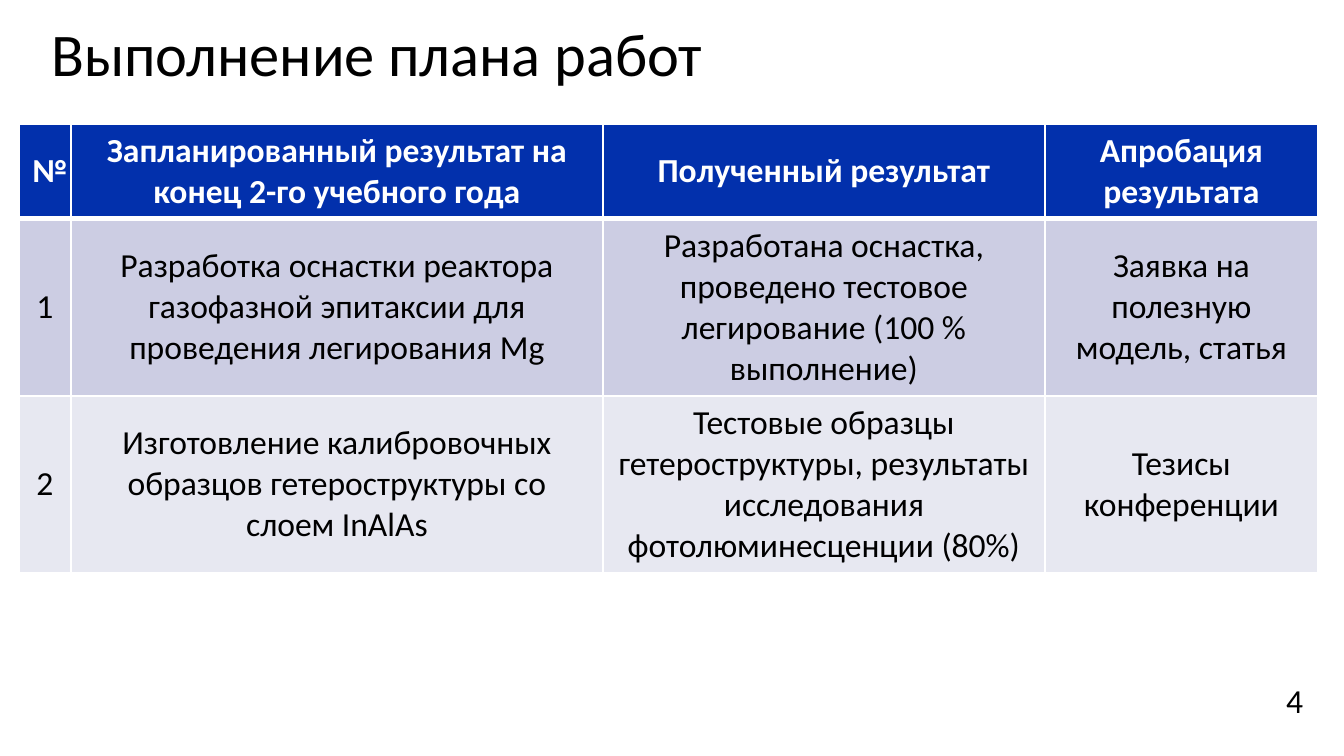
import pptx
import pptx.dml.color
import pptx.enum.text
import pptx.oxml
import pptx.oxml.ns
import pptx.util

PX = 914400 / 134.4  # EMU in one px
FONT = "Calibri"
BLACK, WHITE, BLUE = "000000", "FFFFFF", "0230AC"
BANDS = ["CCCDE3", "E7E8F1"]

ALIGN = pptx.enum.text.PP_ALIGN
ANCHOR = pptx.enum.text.MSO_ANCHOR


def px(length):
    return pptx.util.Emu(round(length * PX))


def color(value):
    return pptx.dml.color.RGBColor.from_string(value)


class PlanSlide:
    def __init__(self, deck):
        self.page = deck.slides.add_slide(deck.slide_layouts[6])

    def add_span(self, frame, text, size, ink=BLACK, bold=False, align=ALIGN.CENTER):
        para = frame.paragraphs[0]
        para.alignment = align
        span = para.add_run()
        span.text = text
        span.font.name = FONT
        span.font.size = pptx.util.Pt(size)
        span.font.bold = bold
        span.font.color.rgb = color(ink)

    def add_text(self, left, top, width, height, text, size,
                 align=ALIGN.LEFT, anchor=ANCHOR.TOP):
        box = self.page.shapes.add_textbox(px(left), px(top), px(width), px(height))
        box.text_frame.word_wrap = True
        box.text_frame.vertical_anchor = anchor
        self.add_span(box.text_frame, text, size, align=align)

    def add_border(self, cell, side, points):
        line = pptx.oxml.parse_xml(
            f'<a:{side} {pptx.oxml.ns.nsdecls("a")} w="{pptx.util.Pt(points)}">'
            f'<a:solidFill><a:srgbClr val="{WHITE}"/></a:solidFill></a:{side}>')
        cell._tc.get_or_add_tcPr().append(line)

    def add_table(self, left, top, widths, heights, rows):
        frame = self.page.shapes.add_table(
            len(rows), len(widths), px(left), px(top), px(sum(widths)), px(sum(heights)))
        table = frame.table
        for column, width in zip(table.columns, widths):
            column.width = px(width)
        for row, height in zip(table.rows, heights):
            row.height = px(height)
        for r, texts in enumerate(rows):
            header = r == 0
            for c, text in enumerate(texts):
                cell = table.cell(r, c)
                cell.vertical_anchor = ANCHOR.MIDDLE
                # Borders come before the fill in the cell properties
                for side in ("lnL", "lnR", "lnT", "lnB"):
                    heavy = (header and side == "lnB") or (r == 1 and side == "lnT")
                    self.add_border(cell, side, 3 if heavy else 1)
                cell.fill.solid()
                cell.fill.fore_color.rgb = color(BLUE if header else BANDS[(r - 1) % 2])
                self.add_span(cell.text_frame, text, 18, WHITE if header else BLACK, header)


def main():
    deck = pptx.Presentation()
    deck.slide_width, deck.slide_height = px(1344), px(756)
    slide = PlanSlide(deck)

    # Title
    slide.add_text(19, 3, 716, 92, "Выполнение плана работ", 32.4,
                   ALIGN.CENTER, ANCHOR.BOTTOM)

    # Planned and achieved results
    slide.add_table(19, 124, [52, 532, 442, 273], [95, 177, 177], [
        ["№", "Запланированный результат на конец 2-го учебного года",
         "Полученный результат", "Апробация результата"],
        ["1", "Разработка оснастки реактора газофазной эпитаксии для проведения легирования Mg",
         "Разработана оснастка, проведено тестовое легирование (100 % выполнение)",
         "Заявка на полезную модель, статья"],
        ["2", "Изготовление калибровочных образцов гетероструктуры со слоем InAlAs",
         "Тестовые образцы гетероструктуры, результаты исследования фотолюминесценции (80%)",
         "Тезисы конференции"],
    ])

    # Page number
    slide.add_text(1273, 673, 39, 54, "4", 18)

    deck.save("out.pptx")


if __name__ == "__main__":
    main()
